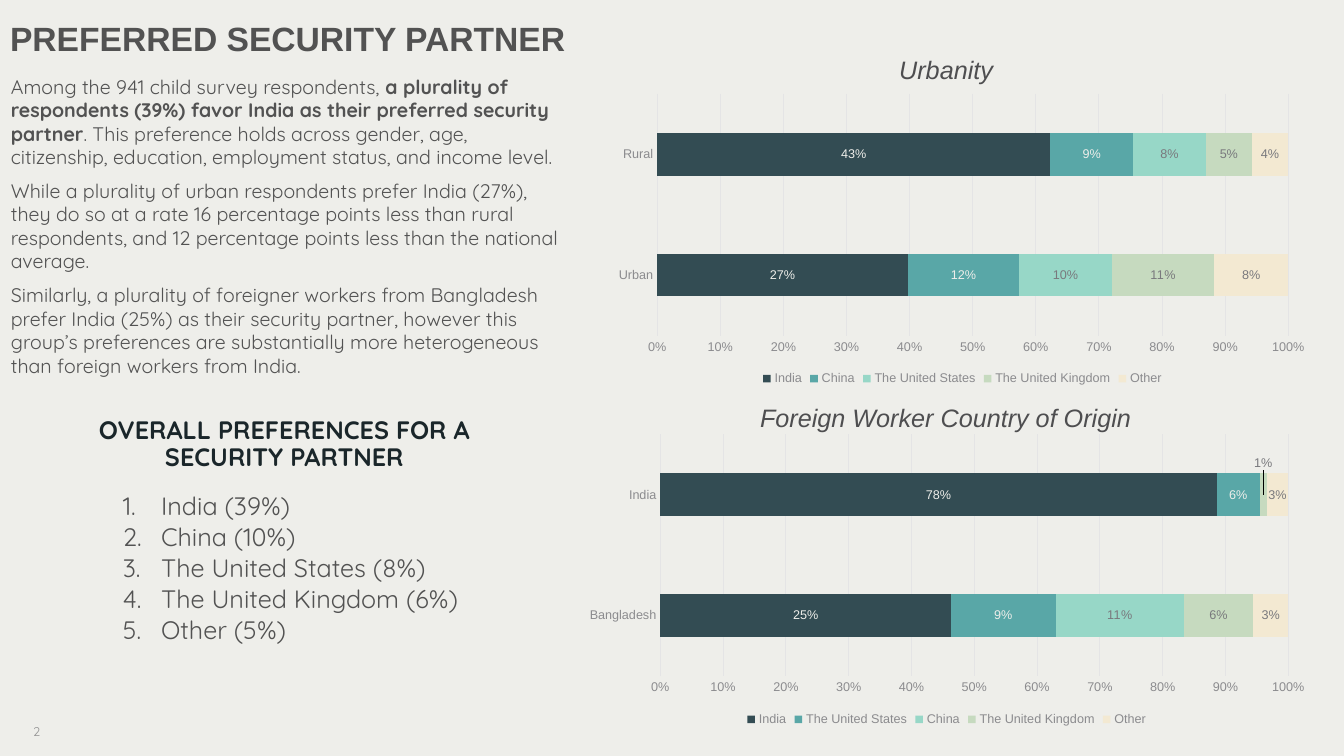
from lxml import etree
from pptx import Presentation
from pptx.chart.data import CategoryChartData
from pptx.dml.color import RGBColor
from pptx.enum import chart as ch, text
from pptx.oxml import parse_xml
from pptx.oxml.ns import nsdecls, qn
from pptx.util import Inches, Pt

GREY, AXIS, GRID = "525252", "8B8B8E", "E4E4E5"
LIGHT, DARK = "EEEEEA", "79797D"
SERIES_STYLE = [("334C53", LIGHT), ("59A7A7", LIGHT), ("97D7C7", DARK),
                ("C6DABF", DARK), ("F3E9D2", DARK)]


def style(font, color, **values):
    font.color.rgb = RGBColor.from_string(color)
    for name, value in values.items():
        setattr(font, name, value)


def manual_layout(**values):
    """Return a c:layout element holding the given fractions of the chart."""
    items = "".join(f'<c:{k} val="{v}"/>' for k, v in values.items())
    return parse_xml(f'<c:layout {nsdecls("c")}><c:manualLayout>{items}'
                     '</c:manualLayout></c:layout>')


prs = Presentation()
prs.slide_width, prs.slide_height = Inches(13.33), Inches(7.5)
s = prs.slides.add_slide(prs.slide_layouts[5])
s.background.fill.solid()
s.background.fill.fore_color.rgb = RGBColor.from_string(LIGHT)

# Title
title = s.shapes.title
title.left, title.top, title.width, title.height = map(Inches, (0, 0.01, 5.98, 0.79))
tf = title.text_frame
tf.text = "PREFERRED SECURITY PARTNER"
tf.auto_size = text.MSO_AUTO_SIZE.NONE
tf.vertical_anchor = text.MSO_ANCHOR.MIDDLE
p = tf.paragraphs[0]
p.alignment, p.line_spacing = text.PP_ALIGN.LEFT, 0.9
style(p.runs[0].font, GREY, name="Arial", size=Pt(24), bold=True)

# Text boxes: place, paragraphs of (words, bold) runs, font, paragraph format, frame format
findings = [
    [("Among the 941 child survey respondents, ", False),
     ("a plurality of respondents (39%) favor India as their preferred security partner", True),
     (". This preference holds across gender, age, citizenship, education, "
      "employment status, and income level.", False)],
    [("While a plurality of urban respondents prefer India (27%), they do so at a rate "
      "16 percentage points less than rural respondents, and 12 percentage points less "
      "than the national average.", False)],
    [("Similarly, a plurality of foreigner workers from Bangladesh prefer India (25%) as "
      "their security partner, however this group’s preferences are substantially more "
      "heterogeneous than foreign workers from India.", False)],
]
ranking = ["India (39%)", "China (10%)", "The United States (8%)",
           "The United Kingdom (6%)", "Other (5%)"]
chart_title = dict(color="4E4E50", name="Arial", size=Pt(18), italic=True)
no_wrap = dict(word_wrap=False, auto_size=text.MSO_AUTO_SIZE.SHAPE_TO_FIT_TEXT)
boxes = [
    ((0.01, 0.69, 5.7, 3.64), findings,
     dict(color=GREY, name="Quicksand", size=Pt(14)), dict(space_before=Pt(7.2)), {}),
    ((0.28, 4.22, 5.08, 0.39), [[("OVERALL PREFERENCES FOR A SECURITY PARTNER", True)]],
     dict(color="1A262A", name="Quicksand", size=Pt(18)),
     dict(alignment=text.PP_ALIGN.CENTER, line_spacing=0.9),
     dict(vertical_anchor=text.MSO_ANCHOR.MIDDLE,
          margin_left=Inches(0.16), margin_right=Inches(0.16),
          margin_top=Inches(0.09), margin_bottom=Inches(0.09))),
    ((1.12, 4.8, 4, 2.03), [[(item, False)] for item in ranking],
     dict(color=GREY, name="Quicksand", size=Pt(18)),
     dict(line_spacing=0.9, space_after=Pt(2.7)),
     dict(margin_top=Inches(0.1), margin_right=Inches(0.14), margin_bottom=Inches(0.16))),
    ((0.23, 7.13, 0.55, 0.36), [[("2", False)]],
     dict(color="919191", name="Quicksand", size=Pt(9)), {}, {}),
    ((7.44, 3.94, 3.91, 0.4), [[("Foreign Worker Country of Origin", False)]],
     chart_title, {}, no_wrap),
    ((8.82, 0.49, 1.14, 0.4), [[("Urbanity", False)]], chart_title, {}, no_wrap),
]
for place, paragraphs, font, paragraph_format, frame_format in boxes:
    tf = s.shapes.add_textbox(*map(Inches, place)).text_frame
    tf.word_wrap = True
    for name, value in frame_format.items():
        setattr(tf, name, value)
    for i, runs in enumerate(paragraphs):
        p = tf.add_paragraph() if i else tf.paragraphs[0]
        for name, value in paragraph_format.items():
            if i or name != "space_before":
                setattr(p, name, value)
        if len(paragraphs) == len(ranking):
            pPr = p._p.get_or_add_pPr()
            pPr.set("marL", str(Inches(0.38)))
            pPr.set("indent", str(-Inches(0.38)))
            etree.SubElement(pPr, qn("a:buFont"), typeface="+mj-lt")
            etree.SubElement(pPr, qn("a:buAutoNum"), type="arabicPeriod")
        for words, bold in runs:
            r = p.add_run()
            r.text = words
            style(r.font, bold=bold, **font)

# Charts: place, plot area, categories, series
charts = [
    ((5.7, 4.25, 7.38, 3), dict(x=0.115, y=0.02, w=0.844, h=0.8), ["Bangladesh", "India"],
     [("India", (0.25, 0.78)), ("The United States", (0.09, 0.06)), ("China", (0.11, 0)),
      ("The United Kingdom", (0.06, 0.01)), ("Other", (0.03, 0.03))]),
    ((6, 0.87, 7.09, 3), dict(x=0.073, y=0.02, w=0.883, h=0.8), ["Urban", "Rural"],
     [("India", (0.27, 0.43)), ("China", (0.12, 0.09)), ("The United States", (0.1, 0.08)),
      ("The United Kingdom", (0.11, 0.05)), ("Other", (0.08, 0.04))]),
]
small = dict(name="Arial", size=Pt(9))
for place, plot_area, categories, series in charts:
    data = CategoryChartData(number_format="0%")
    data.categories = categories
    for name, values in series:
        data.add_series(name, values)
    chart = s.shapes.add_chart(ch.XL_CHART_TYPE.BAR_STACKED_100, *map(Inches, place), data).chart
    chart.has_title = False
    style(chart.font, "4E4E50", name="Arial", size=Pt(10))
    chart.has_legend = True
    chart.legend.position = ch.XL_LEGEND_POSITION.BOTTOM
    chart.legend.include_in_layout = False
    style(chart.legend.font, AXIS, **small)

    cat, val = chart.category_axis, chart.value_axis
    for axis in (cat, val):
        axis.major_tick_mark = axis.minor_tick_mark = ch.XL_TICK_MARK.NONE
        style(axis.tick_labels.font, AXIS, **small)
    val.tick_labels.number_format = "0%"
    val.tick_labels.number_format_is_linked = False
    val.has_major_gridlines = True
    val.format.line.fill.background()
    for line in (cat.format.line, val.major_gridlines.format.line):
        line.color.rgb = RGBColor.from_string(GRID)
        line.width = Pt(0.75)

    plot = chart.plots[0]
    plot.gap_width, plot.overlap, plot.vary_by_categories = 182, 100, False
    for bar, (fill, label_color) in zip(plot.series, SERIES_STYLE):
        bar.format.fill.solid()
        bar.format.fill.fore_color.rgb = RGBColor.from_string(fill)
        labels = bar.data_labels
        labels.show_value = True
        labels.position = ch.XL_LABEL_POSITION.CENTER
        labels.number_format = "0%;;;"  # hides zero values
        labels.number_format_is_linked = False
        style(labels.font, label_color, **small)
        for i, value in enumerate(bar.values):
            if value == 0.01:  # too narrow: label goes above the bar
                label = bar.points[i].data_label
                label.position = ch.XL_LABEL_POSITION.CENTER
                style(label.font, label_color, **small)
                idx = labels._element.find(qn("c:dLbl")).find(qn("c:idx"))
                idx.addnext(manual_layout(x=0, y=-0.106))

    area = chart._chartSpace.chart.plotArea
    for old in area.findall(qn("c:layout")):
        area.remove(old)
    area.insert(0, manual_layout(layoutTarget="inner", xMode="edge", yMode="edge", **plot_area))

prs.save("out.pptx")
